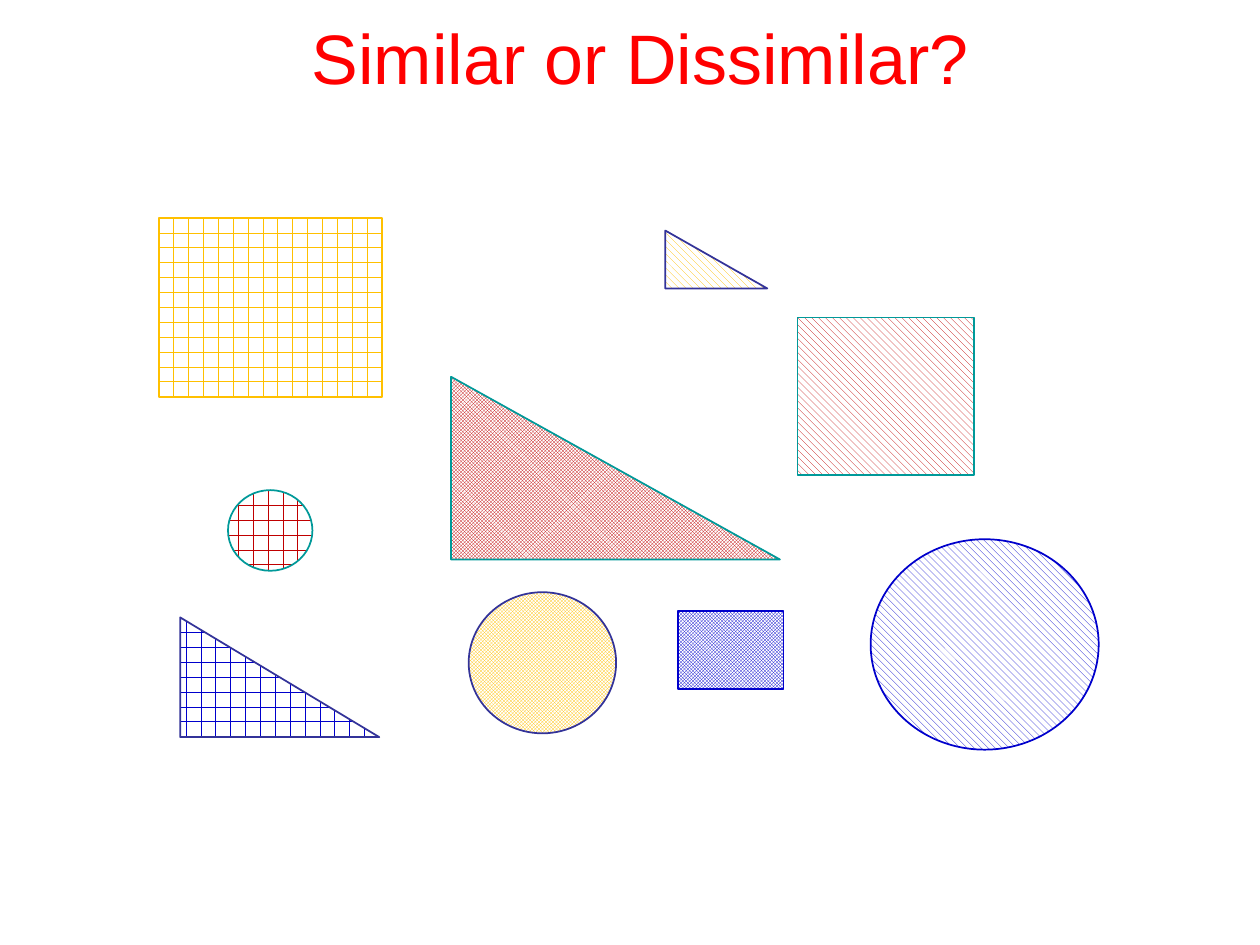
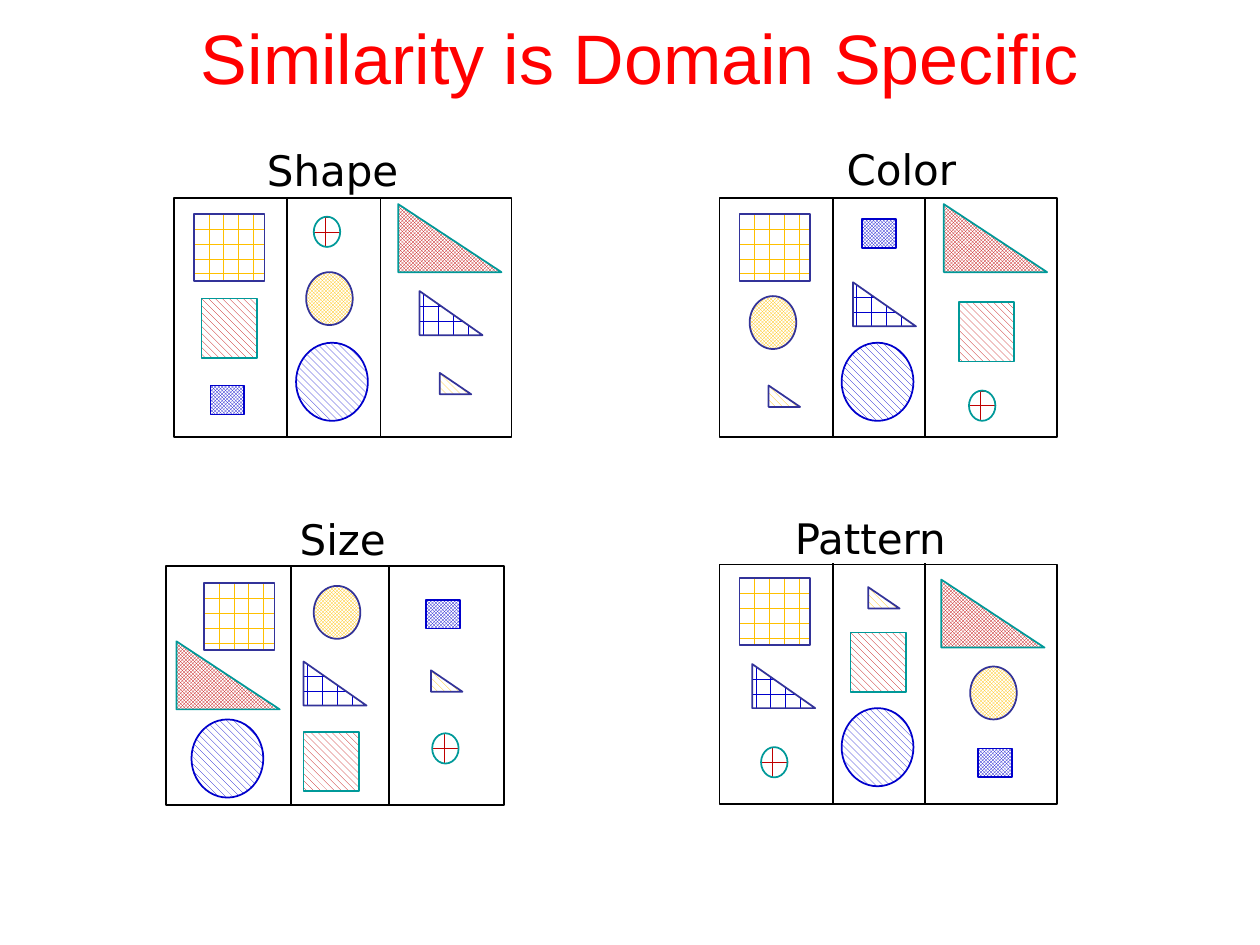
from dataclasses import dataclass

from pptx import Presentation
from pptx.dml.color import RGBColor
from pptx.enum.dml import MSO_PATTERN
from pptx.enum.shapes import MSO_CONNECTOR, MSO_SHAPE
from pptx.enum.text import MSO_AUTO_SIZE, PP_ALIGN
from pptx.oxml.ns import qn
from pptx.util import Inches, Pt

RECTANGLE, ELLIPSE, TRIANGLE = MSO_SHAPE.RECTANGLE, MSO_SHAPE.OVAL, MSO_SHAPE.RIGHT_TRIANGLE
BRICK = MSO_PATTERN.HORIZONTAL_BRICK
CHECK = MSO_PATTERN.SMALL_CHECKER_BOARD
DIAGONAL = MSO_PATTERN.WIDE_DOWNWARD_DIAGONAL
STRAIGHT = MSO_CONNECTOR.STRAIGHT
CENTER = PP_ALIGN.CENTER
FIT_SHAPE = MSO_AUTO_SIZE.SHAPE_TO_FIT_TEXT

COLUMNS, ROWS = 100, 75
CELL = 0.1
GOLD, RED, BLUE = "FFC000", "C00000", "0000CC"
TEAL, INDIGO = "009999", "333399"
BLACK, WHITE, TITLE_RED = "000000", "FFFFFF", "FF0000"
TITLE_FONT, LABEL_FONT = "Arial", "DejaVu Sans"
LINE_SPACING = 1.02
TITLE_BOX = (8.1, 0, 85.4, 9.3)
PANEL_WIDTH, PANEL_HEIGHT = 26.8, 19
LABEL_HEIGHT = 4.8


@dataclass
class Figure:
    """One patterned figure, with its size inside a panel in grid cells."""
    preset: int
    pattern: int
    color: str
    outline: str
    width: float
    height: float


@dataclass
class Panel:
    """One sorting of the figures, with places relative to its own corner."""
    label: str
    left: float
    top: float
    label_place: tuple
    label_width: float
    dividers: tuple
    divider_shift: float
    places: dict


FIGURES = {
    "gold rectangle": Figure(RECTANGLE, BRICK, GOLD, INDIGO, 5.6, 5.3),
    "red circle": Figure(ELLIPSE, BRICK, RED, TEAL, 2.1, 2.4),
    "red triangle": Figure(TRIANGLE, CHECK, RED, TEAL, 8.2, 5.4),
    "red rectangle": Figure(RECTANGLE, DIAGONAL, RED, TEAL, 4.4, 4.7),
    "gold circle": Figure(ELLIPSE, CHECK, GOLD, INDIGO, 3.7, 4.2),
    "blue circle": Figure(ELLIPSE, DIAGONAL, BLUE, BLUE, 5.7, 6.2),
    "blue rectangle": Figure(RECTANGLE, CHECK, BLUE, BLUE, 2.7, 2.3),
    "gold triangle": Figure(TRIANGLE, DIAGONAL, GOLD, INDIGO, 2.5, 1.7),
    "blue triangle": Figure(TRIANGLE, BRICK, BLUE, INDIGO, 5, 3.5),
}

SCATTERED_BOXES = {
    "gold rectangle": (12.6, 17.3, 17.7, 14.2),
    "red circle": (18.1, 38.9, 6.7, 6.4),
    "red triangle": (35.8, 29.9, 26.1, 14.5),
    "red rectangle": (63.3, 25.2, 14, 12.5),
    "gold circle": (37.2, 47, 11.7, 11.2),
    "blue circle": (69.1, 42.8, 18.1, 16.7),
    "blue rectangle": (53.8, 48.5, 8.4, 6.2),
    "gold triangle": (52.8, 18.3, 8.1, 4.6),
    "blue triangle": (14.3, 49, 15.8, 9.5),
}

PANELS = [
    Panel("Shape", 13.8, 15.7, (6.4, -4.8), 12.6, (9, 16.4), 0, {
        "gold rectangle": (1.6, 1.3), "red rectangle": (2.2, 8), "blue rectangle": (2.9, 14.9),
        "red circle": (11.1, 1.5), "gold circle": (10.5, 5.9), "blue circle": (9.7, 11.5),
        "red triangle": (17.8, 0.5), "blue triangle": (19.5, 7.4), "gold triangle": (21.1, 13.9),
    }),
    Panel("Color", 57.1, 15.7, (9.1, -4.9), 10.8, (9, 16.3), 0, {
        "gold rectangle": (1.6, 1.3), "gold circle": (2.4, 7.8), "gold triangle": (3.9, 14.9),
        "blue rectangle": (11.3, 1.7), "blue triangle": (10.6, 6.7), "blue circle": (9.7, 11.5),
        "red triangle": (17.8, 0.5), "red rectangle": (19, 8.3), "red circle": (19.8, 15.3),
    }),
    Panel("Size", 13.2, 44.9, (9.6, -4.7), 9, (9.9, 17.7), 0, {
        "gold rectangle": (3, 1.4), "red triangle": (0.8, 6), "blue circle": (2, 12.2),
        "gold circle": (11.7, 1.6), "blue triangle": (10.9, 7.6), "red rectangle": (10.9, 13.2),
        "blue rectangle": (20.6, 2.7), "gold triangle": (21, 8.3), "red circle": (21.1, 13.3),
    }),
    Panel("Pattern", 57.1, 44.8, (5, -4.7), 14.2, (9, 16.3), -0.1, {
        "gold rectangle": (1.6, 1.1), "blue triangle": (2.6, 7.9), "red circle": (3.3, 14.5),
        "gold triangle": (11.8, 1.8), "red rectangle": (10.4, 5.4), "blue circle": (9.7, 11.4),
        "red triangle": (17.6, 1.2), "gold circle": (19.9, 8.1), "blue rectangle": (20.5, 14.6),
    }),
]


def rgb(value):
    """Turn a hex string into a colour."""
    return RGBColor.from_string(value)


def cells(*lengths):
    """Turn grid cells into slide lengths."""
    return [Inches(length * CELL) for length in lengths]


def set_line(line, color):
    """Give an outline or connector the shared width and a colour."""
    line.color.rgb = rgb(color)
    line.width = Pt(1)


def add_text(shapes, box, text, font_name, size, color):
    """Add one line of text and return its frame."""
    text_frame = shapes.add_textbox(*cells(*box)).text_frame
    text_frame.text = text
    paragraph = text_frame.paragraphs[0]
    paragraph.line_spacing = LINE_SPACING
    font = paragraph.runs[0].font
    font.name, font.size, font.color.rgb = font_name, Pt(size), rgb(color)
    return text_frame


def add_title(slide, text):
    """Add the centred slide title."""
    text_frame = add_text(slide.shapes, TITLE_BOX, text, TITLE_FONT, 40, TITLE_RED)
    text_frame.word_wrap = True
    text_frame.margin_top = Inches(CELL)
    text_frame.paragraphs[0].alignment = CENTER


def add_figure(shapes, figure, box, outline):
    """Add a patterned figure filling the given box."""
    shape = shapes.add_shape(figure.preset, *cells(*box))
    shape.shadow.inherit = False
    shape.fill.patterned()
    shape.fill.pattern = figure.pattern
    shape.fill.fore_color.rgb = rgb(figure.color)
    shape.fill.back_color.rgb = rgb(WHITE)
    set_line(shape.line, outline)


def add_divider(shapes, left, top):
    """Add a vertical line as high as a panel."""
    divider = shapes.add_connector(STRAIGHT, *cells(left, top, left, top + PANEL_HEIGHT))
    set_line(divider.line, BLACK)
    properties = divider._element.spPr
    properties.append(properties.makeelement(qn("a:effectLst"), {}))


def add_panel(slide, panel):
    """Add a labelled frame of three columns with its sorted figures."""
    shapes = slide.shapes.add_group_shape().shapes
    for name, figure in FIGURES.items():
        left, top = panel.places[name]
        box = (panel.left + left, panel.top + top, figure.width, figure.height)
        add_figure(shapes, figure, box, figure.outline)
    frame = shapes.add_shape(
        RECTANGLE, *cells(panel.left, panel.top, PANEL_WIDTH, PANEL_HEIGHT))
    frame.shadow.inherit = False
    frame.fill.background()
    set_line(frame.line, BLACK)
    for divider in panel.dividers:
        add_divider(shapes, panel.left + divider, panel.top + panel.divider_shift)
    left, top = panel.label_place
    box = (panel.left + left, panel.top + top, panel.label_width, LABEL_HEIGHT)
    text_frame = add_text(shapes, box, panel.label, LABEL_FONT, 24, BLACK)
    text_frame.word_wrap = False
    text_frame.auto_size = FIT_SHAPE


def build_question_slide(slide):
    """Scatter all figures over the slide."""
    shapes = slide.shapes.add_group_shape().shapes
    for name, figure in FIGURES.items():
        outline = GOLD if name == "gold rectangle" else figure.outline
        add_figure(shapes, figure, SCATTERED_BOXES[name], outline)
    add_title(slide, "Similar or Dissimilar?")


def build_answer_slide(slide):
    """Show the four ways to sort the figures."""
    for panel in PANELS:
        add_panel(slide, panel)
    add_title(slide, "Similarity is Domain Specific")


def main():
    """Build and save the presentation."""
    presentation = Presentation()
    presentation.slide_width, presentation.slide_height = cells(COLUMNS, ROWS)
    blank_layout = presentation.slide_layouts[6]
    for build_slide in (build_question_slide, build_answer_slide):
        build_slide(presentation.slides.add_slide(blank_layout))
    presentation.save("out.pptx")


if __name__ == "__main__":
    main()
